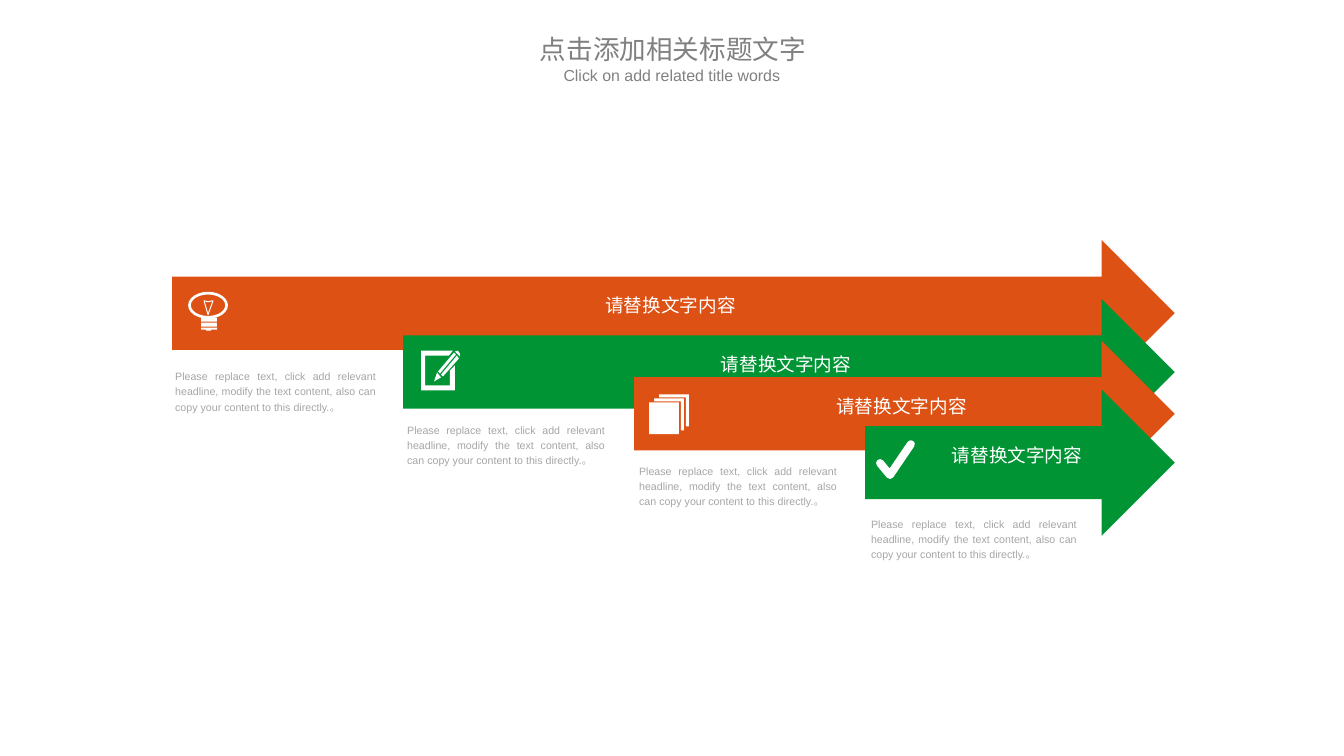
from dataclasses import dataclass

from lxml.etree import SubElement
from pptx import Presentation
from pptx.dml.color import RGBColor
from pptx.enum.shapes import MSO_SHAPE
from pptx.enum.text import MSO_ANCHOR, MSO_AUTO_SIZE, PP_ALIGN
from pptx.oxml.ns import qn
from pptx.util import Pt

PX = 9525  # EMU per px


@dataclass(frozen=True)
class Theme:
    orange: RGBColor = RGBColor(0xDD, 0x51, 0x15)
    green: RGBColor = RGBColor(0x00, 0x94, 0x35)
    white: RGBColor = RGBColor(0xFF, 0xFF, 0xFF)
    heading: RGBColor = RGBColor(0x80, 0x80, 0x80)
    caption: RGBColor = RGBColor(0xA6, 0xA6, 0xA6)
    latin_font: str = "Arial"
    chinese_font: str = "Noto Sans CJK SC"
    title_size: int = 20
    subtitle_size: int = 12
    label_size: int = 14
    caption_size: int = 8


THEME = Theme()
LABEL = "请替换文字内容"
CAPTION = ("Please replace text, click add relevant headline, modify the text "
           "content, also can copy your content to this directly.。")

# Arrow top, colour, caption top, caption width
STEPS = [
    (241, THEME.orange, 364, 222),
    (300, THEME.green, 418, 219),
    (342, THEME.orange, 459, 219),
    (391, THEME.green, 512, 227),
]
ARROW_LEFT, ARROW_STEP, ARROW_TIP, ARROW_HEIGHT = 173, 232, 1180, 147
CAPTION_LEFT, CAPTION_STEP = 166, 233


def px(*lengths):
    return [length * PX for length in lengths]


def write(box, text, size, color, align, margins=(10, 5, 10, 5),
          anchor=MSO_ANCHOR.TOP, font=THEME.latin_font, line_spacing=1):
    frame = box.text_frame
    frame.text = text
    frame.word_wrap = True
    frame.auto_size = MSO_AUTO_SIZE.NONE
    frame.vertical_anchor = anchor
    (frame.margin_left, frame.margin_top,
     frame.margin_right, frame.margin_bottom) = px(*margins)
    para = frame.paragraphs[0]
    para.alignment = align
    para.line_spacing = line_spacing
    para.space_before = Pt(0)
    para.font.size = Pt(size)
    para.font.name = font
    para.font.color.rgb = color


def fill_heading(box, place, text, size, font):
    box.left, box.top, box.width, box.height = px(*place)
    write(box, text, size, THEME.heading, PP_ALIGN.CENTER, font=font)


def add_solid(page, kind, place, color=THEME.white):
    shape = page.shapes.add_shape(kind, *px(*place))
    shape.shadow.inherit = False
    shape.fill.solid()
    shape.fill.fore_color.rgb = color
    shape.line.fill.background()
    return shape


def add_outline(page, points, closed=True):
    builder = page.shapes.build_freeform(*points[0], scale=PX)
    builder.add_line_segments(points[1:], close=closed)
    shape = builder.convert_to_shape()
    shape.shadow.inherit = False
    return shape


def add_polygon(page, points):
    shape = add_outline(page, points)
    shape.fill.solid()
    shape.fill.fore_color.rgb = THEME.white
    shape.line.fill.background()


def add_stroke(page, points, width, closed):
    shape = add_outline(page, points, closed)
    shape.fill.background()
    shape.line.color.rgb = THEME.white
    shape.line.width = width * PX
    # Round ends and corners
    line = shape.line._get_or_add_ln()
    line.set("cap", "rnd")
    SubElement(line, qn("a:round"))


def add_arrow(page, left, top, color):
    place = (left, top, ARROW_TIP - left, ARROW_HEIGHT)
    arrow = add_solid(page, MSO_SHAPE.RIGHT_ARROW, place, color)
    write(arrow, LABEL, THEME.label_size, THEME.white, PP_ALIGN.CENTER,
          margins=(57, 3, 26, 23), anchor=MSO_ANCHOR.MIDDLE, line_spacing=1.2)


def add_caption(page, left, top, width):
    box = page.shapes.add_textbox(*px(left, top, width, 56))
    write(box, CAPTION, THEME.caption_size, THEME.caption, PP_ALIGN.JUSTIFY,
          line_spacing=1.2)


def add_bulb(page):
    glass = add_solid(page, MSO_SHAPE.DONUT, (189, 293, 40, 27))
    glass.adjustments[0] = 0.1
    add_stroke(page, [(205, 302), (209, 303), (214, 302), (209, 316)], 1, True)
    for top, height in ((319, 4), (324, 4)):
        add_solid(page, MSO_SHAPE.RECTANGLE, (202, top, 16, height))
    add_polygon(page, [(202, 329), (218, 329), (218, 331), (212, 331),
                       (212, 332), (207, 332), (207, 331), (202, 331)])


def add_pencil(page):
    frame = [(452, 387), (427, 387), (427, 357), (451, 357), (455, 352),
             (423, 352), (423, 392), (457, 392), (457, 367), (452, 372)]
    nib = [(443, 379), (439, 374), (436, 383)]
    left_side = [(456, 354), (440, 373), (442, 375), (458, 356)]
    right_side = [(443, 376), (445, 378), (461, 360), (459, 357)]
    eraser = [(457, 353), (460, 352), (462, 355), (462, 358)]
    for points in (frame, nib, left_side, right_side, eraser):
        add_polygon(page, points)


def add_sheets(page):
    add_solid(page, MSO_SHAPE.RECTANGLE, (652, 404, 30, 32))
    edge = [(657, 403), (657, 400), (687, 400), (687, 432), (684, 432), (684, 403)]
    for depth in range(2):
        add_polygon(page, [(x + 5 * depth, y - 4 * depth) for x, y in edge])


def add_check(page):
    add_stroke(page, [(884, 465), (894, 477), (915, 446)], 8, False)


def main():
    deck = Presentation()
    deck.slide_width, deck.slide_height = px(1350, 759)
    page = deck.slides.add_slide(deck.slide_layouts[0])

    # Headings
    title, subtitle = page.placeholders
    fill_heading(title, (515, 28, 322, 39), "点击添加相关标题文字",
                 THEME.title_size, THEME.chinese_font)
    fill_heading(subtitle, (553, 61, 244, 39), "Click on add related title words",
                 THEME.subtitle_size, THEME.latin_font)

    # Stepped arrows with captions
    for index, (top, color, caption_top, caption_width) in enumerate(STEPS):
        add_caption(page, CAPTION_LEFT + CAPTION_STEP * index,
                    caption_top, caption_width)
        add_arrow(page, ARROW_LEFT + ARROW_STEP * index, top, color)

    # Icons
    for add_icon in (add_bulb, add_pencil, add_sheets, add_check):
        add_icon(page)

    deck.save("out.pptx")


if __name__ == "__main__":
    main()
